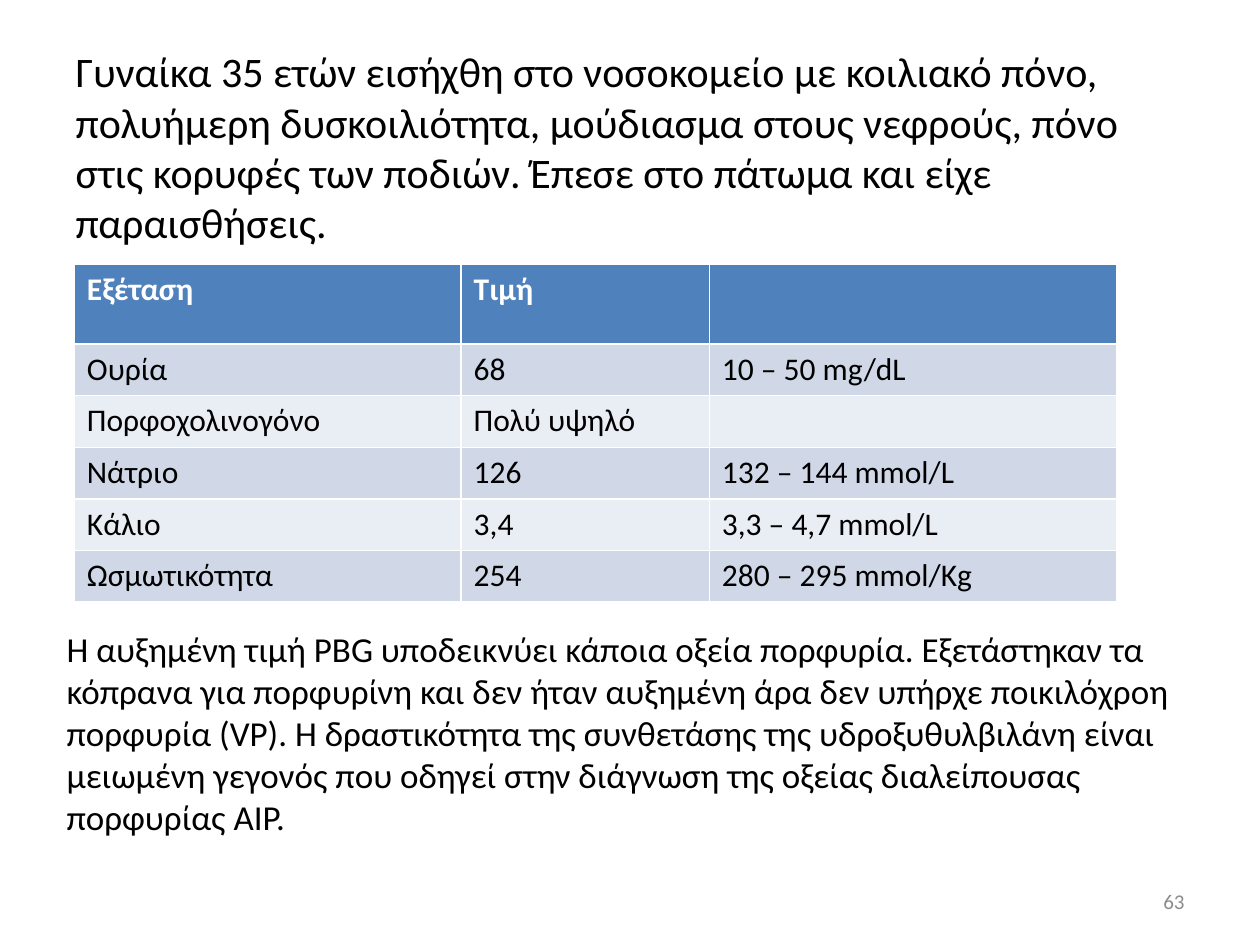
"""Build a case-study slide with laboratory values and the resulting diagnosis."""
from dataclasses import dataclass

from pptx import Presentation
from pptx.dml.color import RGBColor
from pptx.enum.text import MSO_ANCHOR as Anchor, MSO_AUTO_SIZE as AutoSize, PP_ALIGN as Align
from pptx.util import Inches, Pt

WIDTH, HEIGHT = Inches(10), Inches(7.5)
FONT = "Calibri"
COLORS = {
    "text": "000000",
    "header_text": "FFFFFF",
    "number": "8C8C8C",
    "header": "4F81BD",
    "odd_row": "D0D8E8",
    "even_row": "E9EDF4",
}
CASE = (
    "Γυναίκα 35 ετών εισήχθη στο νοσοκομείο με κοιλιακό πόνο, πολυήμερη δυσκοιλιότητα, "
    "μούδιασμα στους νεφρούς, πόνο στις κορυφές των ποδιών. Έπεσε στο πάτωμα και είχε παραισθήσεις."
)
DIAGNOSIS = (
    "H αυξημένη τιμή PBG υποδεικνύει κάποια οξεία πορφυρία. Εξετάστηκαν τα κόπρανα για πορφυρίνη "
    "και δεν ήταν αυξημένη άρα δεν υπήρχε ποικιλόχροη πορφυρία (VP). H δραστικότητα της συνθετάσης "
    "της υδροξυθυλβιλάνη είναι μειωμένη γεγονός που οδηγεί στην διάγνωση της οξείας διαλείπουσας "
    "πορφυρίας AIP."
)


@dataclass(frozen=True)
class Box:
    """Area given as shares of the slide's size."""

    left: float
    top: float
    width: float
    height: float

    def lengths(self) -> tuple[int, int, int, int]:
        """Return left, top, width and height in slide units."""
        return (int(self.left * WIDTH), int(self.top * HEIGHT),
                int(self.width * WIDTH), int(self.height * HEIGHT))


@dataclass(frozen=True)
class Style:
    """Look of a paragraph."""

    size: int
    color: str = "text"
    bold: bool = False
    align: Align = Align.LEFT


@dataclass(frozen=True)
class LabTest:
    """One row of laboratory results."""

    name: str
    value: str
    reference: str = ""


LAB_TESTS = [
    LabTest("Εξέταση", "Τιμή"),
    LabTest("Ουρία", "68", "10 – 50 mg/dL"),
    LabTest("Πορφοχολινογόνο", "Πολύ υψηλό"),
    LabTest("Νάτριο", "126", "132 – 144 mmol/L"),
    LabTest("Kάλιο", "3,4", "3,3 – 4,7 mmol/L"),
    LabTest("Ωσμωτικότητα", "254", "280 – 295 mmol/Kg"),
]
COLUMN_WIDTHS = (3.07, 1.97, 3.23)
HEADER_HEIGHT, ROW_HEIGHT = 0.63, 0.41


def write(text_frame, text: str, style: Style) -> None:
    """Put one styled paragraph into a text frame."""
    text_frame.text = text
    paragraph = text_frame.paragraphs[0]
    paragraph.alignment = style.align
    font = paragraph.font
    font.name, font.size, font.bold = FONT, Pt(style.size), style.bold
    font.color.rgb = RGBColor.from_string(COLORS[style.color])


def fill_text_shape(shape, box: Box, text: str, style: Style, anchor: Anchor) -> None:
    """Place a text shape and write into it."""
    shape.left, shape.top, shape.width, shape.height = box.lengths()
    text_frame = shape.text_frame
    text_frame.word_wrap = True
    text_frame.auto_size = AutoSize.NONE
    text_frame.vertical_anchor = anchor
    write(text_frame, text, style)


def add_text(slide, box: Box, text: str, style: Style, anchor: Anchor = Anchor.TOP) -> None:
    """Add a text box."""
    fill_text_shape(slide.shapes.add_textbox(*box.lengths()), box, text, style, anchor)


def add_lab_table(slide, box: Box) -> None:
    """Add the table of laboratory results."""
    table = slide.shapes.add_table(len(LAB_TESTS), len(COLUMN_WIDTHS), *box.lengths()).table
    for column, width in zip(table.columns, COLUMN_WIDTHS):
        column.width = Inches(width)
    for index, (row, test) in enumerate(zip(table.rows, LAB_TESTS)):
        is_header = index == 0
        row.height = Inches(HEADER_HEIGHT if is_header else ROW_HEIGHT)
        fill = "header" if is_header else "odd_row" if index % 2 else "even_row"
        style = Style(18, "header_text" if is_header else "text", bold=is_header)
        for cell, text in zip(row.cells, (test.name, test.value, test.reference)):
            cell.fill.solid()
            cell.fill.fore_color.rgb = RGBColor.from_string(COLORS[fill])
            write(cell.text_frame, text, style)


def main() -> None:
    """Build and save the slide."""
    presentation = Presentation()
    presentation.slide_width, presentation.slide_height = WIDTH, HEIGHT
    slide = presentation.slides.add_slide(presentation.slide_layouts[5])
    fill_text_shape(slide.shapes.title, Box(0.05, 0.04, 0.9, 0.23), CASE, Style(24), Anchor.MIDDLE)
    add_text(slide, Box(0.717, 0.927, 0.233, 0.053), "63",
             Style(12, "number", align=Align.RIGHT), Anchor.MIDDLE)
    add_lab_table(slide, Box(0.059, 0.28, 0.827, 0.355))
    add_text(slide, Box(0.043, 0.657, 0.906, 0.237), DIAGNOSIS, Style(20))
    presentation.save("out.pptx")


if __name__ == "__main__":
    main()
